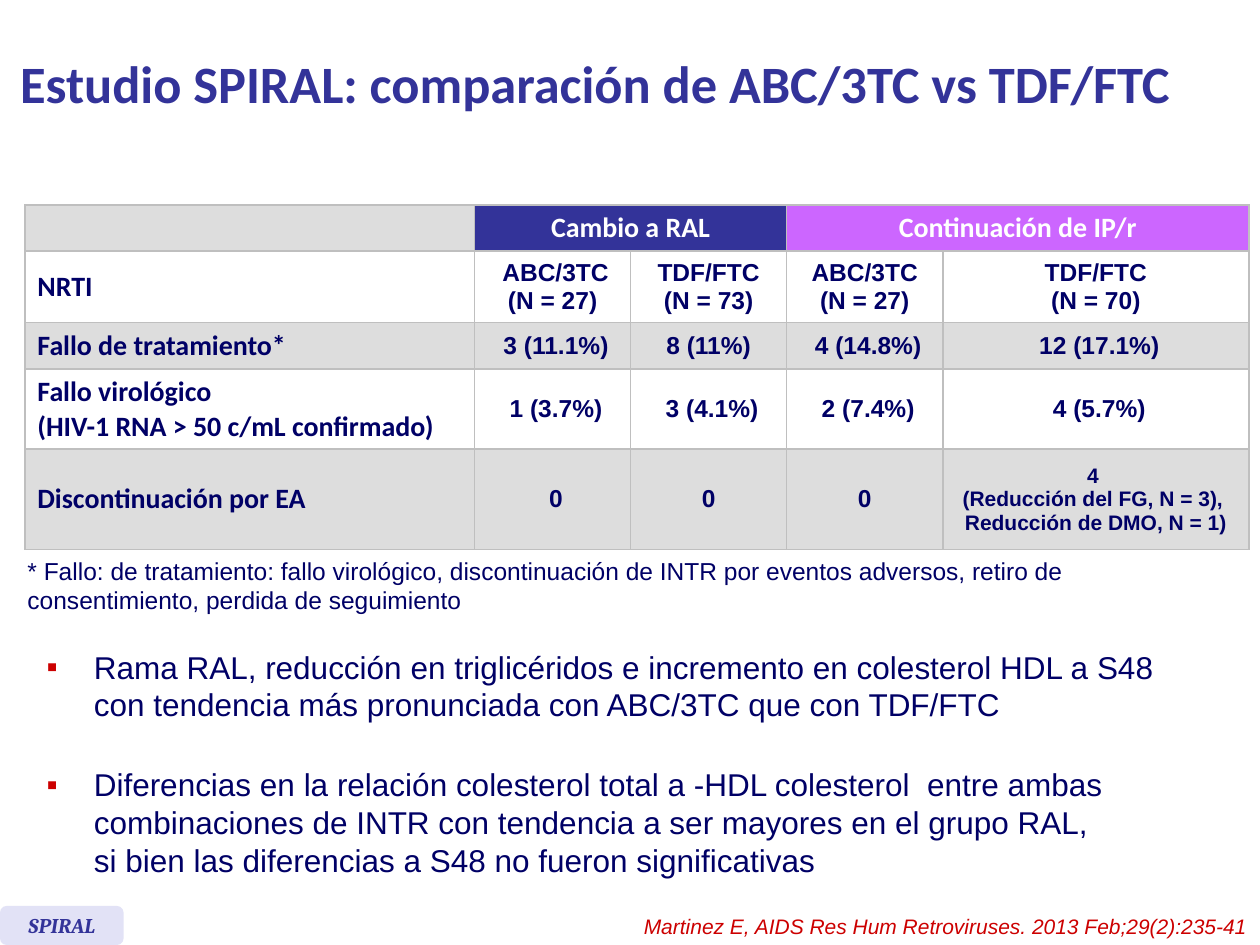
from lxml.etree import SubElement
from pptx import Presentation
from pptx.dml.color import RGBColor
from pptx.enum.shapes import MSO_SHAPE as Shape
from pptx.enum.text import MSO_ANCHOR as Anchor, MSO_AUTO_SIZE as AutoSize, PP_ALIGN as Align
from pptx.oxml.ns import qn
from pptx.util import Pt

COLORS = {
    "indigo": "333399", "navy": "000066", "red": "CC0000", "violet": "CC66FF",
    "white": "FFFFFF", "gray": "DDDDDD", "border": "BFBFBF", "lavender": "E2E2F6",
}
TITLE = {"name": "Calibri", "size": Pt(30), "bold": True, "color": "indigo"}
CITATION = {"name": "Arial", "size": Pt(12), "italic": True, "color": "red"}
BODY = {"name": "Arial", "size": Pt(18), "color": "navy"}
FOOTNOTE = {"name": "Arial", "size": Pt(14), "color": "navy"}
BADGE = {"name": "Cambria", "size": Pt(12), "bold": True, "italic": True, "color": "indigo"}
HEADER = {"name": "Calibri", "size": Pt(16), "bold": True, "color": "white"}
LABEL = {**HEADER, "color": "navy"}
VALUE = {"name": "Arial", "size": Pt(14), "bold": True, "color": "navy"}
DETAIL = {**VALUE, "size": Pt(12)}

COLUMN_WIDTHS = [257, 89.2, 89.2, 89.2, 175]
ROW_HEIGHTS = [26.4, 41, 26.4, 45.6, 57.6]
HEADER_FILLS = ["gray", "indigo", "indigo", "violet", "violet"]
# \v breaks a line inside a paragraph, \n starts a new paragraph
ROWS = [
    ["", "Cambio a RAL", "", "Continuación de IP/r", ""],
    ["NRTI", " ABC/3TC\n(N = 27)", "TDF/FTC\n(N = 73)", "ABC/3TC\n(N = 27)", "TDF/FTC\n(N = 70)"],
    ["Fallo de tratamiento*", " 3 (11.1%)", "8 (11%)", " 4 (14.8%)", " 12 (17.1%)"],
    ["Fallo virológico \v(HIV-1 RNA > 50 c/mL confirmado)",
     " 1 (3.7%)", " 3 (4.1%)", " 2 (7.4%)", " 4 (5.7%)"],
    ["Discontinuación por EA", " 0", "0", "0",
     "4 \v(Reducción del FG, N = 3), \vReducción de DMO, N = 1)"],
]
BULLETS = [
    "Rama RAL, reducción en triglicéridos e incremento en colesterol HDL a S48 "
    "con tendencia más pronunciada con ABC/3TC que con TDF/FTC",
    "Diferencias en la relación colesterol total a -HDL colesterol  entre ambas "
    "combinaciones de INTR con tendencia a ser mayores en el grupo RAL, "
    "\vsi bien las diferencias a S48 no fueron significativas",
]


def rgb(name):
    return RGBColor.from_string(COLORS[name])


def write(frame, text, style, align=Align.LEFT):
    frame.text = text
    for paragraph in frame.paragraphs:
        paragraph.alignment = align
        for run in paragraph.runs:
            for key, value in style.items():
                if key == "color":
                    run.font.color.rgb = rgb(value)
                else:
                    setattr(run.font, key, value)


def place(shape, left, top, width, height):
    box = {"left": left, "top": top, "width": width, "height": height}
    for key, value in box.items():
        setattr(shape, key, Pt(value))


def fill_title(slide):
    title = slide.shapes.title
    place(title, 4.3, 3.6, 699, 87)
    write(title.text_frame, "Estudio SPIRAL: comparación de ABC/3TC vs TDF/FTC", TITLE)
    title.text_frame.vertical_anchor = Anchor.MIDDLE
    title.text_frame.auto_size = AutoSize.NONE


def add_bullet(paragraph):
    properties = paragraph._p.get_or_add_pPr()
    properties.set("marL", str(Pt(27)))
    properties.set("indent", str(-Pt(27)))
    color = SubElement(properties, qn("a:buClr"))
    SubElement(color, qn("a:srgbClr"), val=COLORS["red"])
    SubElement(properties, qn("a:buFont"), typeface="Arial")
    SubElement(properties, qn("a:buChar"), char="▪")


def fill_body(slide):
    body = slide.placeholders[1]
    place(body, 19.4, 366.5, 670, 108)
    frame = body.text_frame
    write(frame, "\n".join(BULLETS), BODY)
    frame.auto_size = AutoSize.NONE
    for paragraph, gap in zip(frame.paragraphs, [0, 24]):
        paragraph.space_before = Pt(gap)
        add_bullet(paragraph)


def add_text(slide, box, text, style, align=Align.LEFT):
    shape = slide.shapes.add_textbox(*map(Pt, box))
    shape.text_frame.word_wrap = True
    write(shape.text_frame, text, style, align)


def add_badge(slide):
    badge = slide.shapes.add_shape(Shape.ROUNDED_RECTANGLE, *map(Pt, (0, 517.7, 70.6, 22.3)))
    badge.shadow.inherit = False
    badge.fill.solid()
    badge.fill.fore_color.rgb = rgb("lavender")
    badge.line.fill.background()
    badge.text_frame.word_wrap = False
    badge.text_frame.vertical_anchor = Anchor.MIDDLE
    write(badge.text_frame, "SPIRAL", BADGE, Align.CENTER)


def set_borders(cell):
    properties = cell._tc.get_or_add_tcPr()
    for position, side in enumerate(("a:lnL", "a:lnR", "a:lnT", "a:lnB")):
        line = SubElement(properties, qn(side), w=str(Pt(1)))
        solid = SubElement(line, qn("a:solidFill"))
        SubElement(solid, qn("a:srgbClr"), val=COLORS["border"])
        properties.insert(position, line)


def cell_style(row, column):
    if row == 0:
        return HEADER
    if column == 0:
        return LABEL
    return DETAIL if (row, column) == (4, 4) else VALUE


def fill_cell(cell, row, column):
    text = ROWS[row][column]
    style = cell_style(row, column)
    write(cell.text_frame, text, style, Align.CENTER if column else Align.LEFT)
    if not text:
        size = str(int(style["size"].pt * 100))
        SubElement(cell.text_frame.paragraphs[0]._p, qn("a:endParaRPr"), sz=size)
    cell.vertical_anchor = Anchor.MIDDLE
    fill = HEADER_FILLS[column] if row == 0 else "white" if row % 2 else "gray"
    cell.fill.solid()
    cell.fill.fore_color.rgb = rgb(fill)
    set_borders(cell)


def add_results_table(slide):
    frame = slide.shapes.add_table(
        len(ROWS), len(COLUMN_WIDTHS), Pt(14.2), Pt(117),
        Pt(sum(COLUMN_WIDTHS)), Pt(sum(ROW_HEIGHTS)))
    table = frame.table
    table.first_row = table.horz_banding = False
    for column, width in zip(table.columns, COLUMN_WIDTHS):
        column.width = Pt(width)
    for row, height in zip(table.rows, ROW_HEIGHTS):
        row.height = Pt(height)
    for row in range(len(ROWS)):
        for column in range(len(COLUMN_WIDTHS)):
            fill_cell(table.cell(row, column), row, column)
    for start in (1, 3):
        table.cell(0, start).merge(table.cell(0, start + 1))


def main():
    presentation = Presentation()
    presentation.slide_width, presentation.slide_height = Pt(720), Pt(540)
    slide = presentation.slides.add_slide(presentation.slide_layouts[1])
    fill_title(slide)
    add_text(slide, (288, 518.4, 432, 21.6),
             "Martinez E, AIDS Res Hum Retroviruses. 2013 Feb;29(2):235-41", CITATION, Align.RIGHT)
    fill_body(slide)
    add_results_table(slide)
    add_text(slide, (8.6, 314, 708, 41),
             "* Fallo: de tratamiento: fallo virológico, discontinuación de INTR por eventos "
             "adversos, retiro de consentimiento, perdida de seguimiento", FOOTNOTE)
    add_badge(slide)
    presentation.save("out.pptx")


if __name__ == "__main__":
    main()
